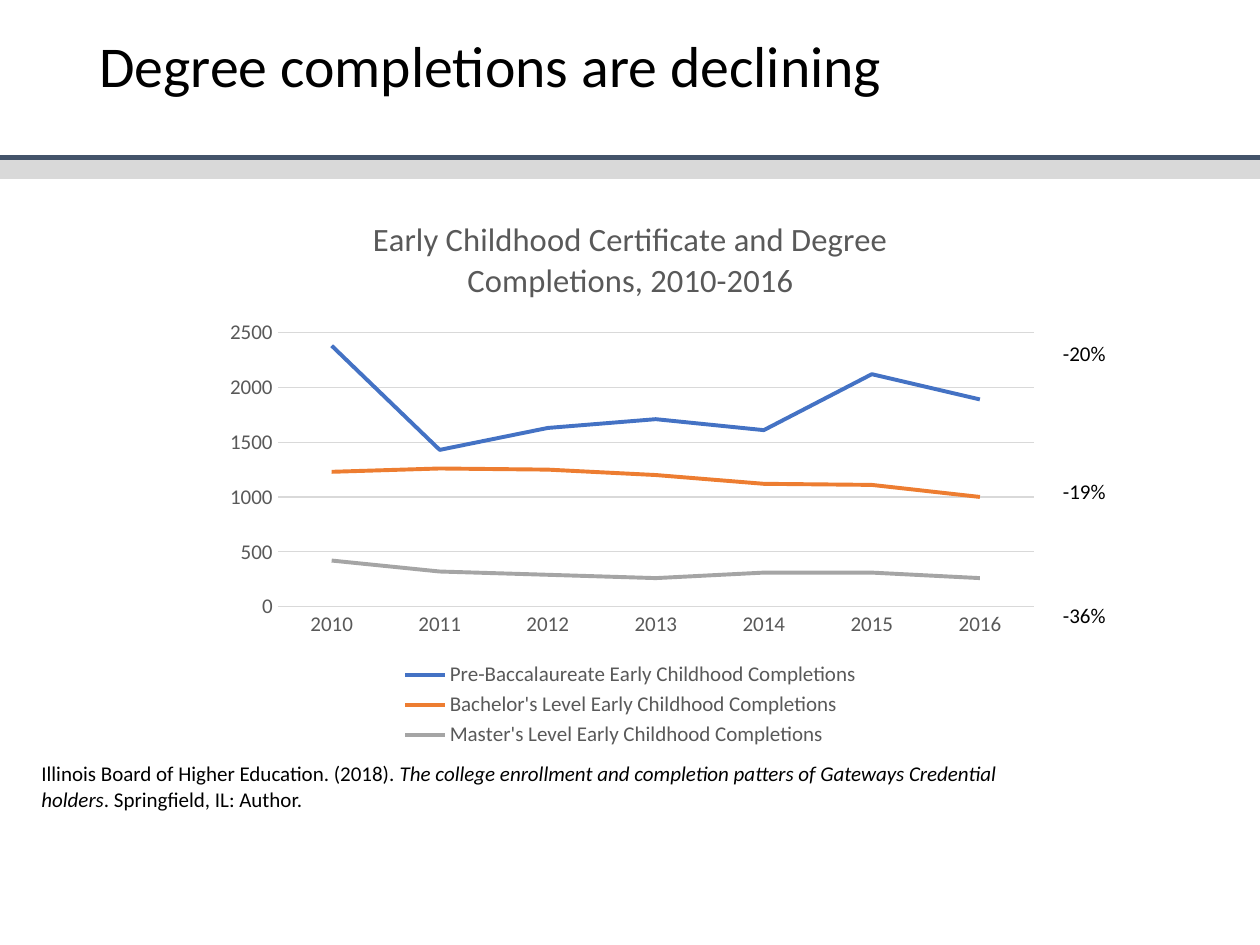
from dataclasses import dataclass

from lxml import etree
from pptx import Presentation
from pptx.chart.data import CategoryChartData
from pptx.dml.color import RGBColor
from pptx.enum.chart import XL_CHART_TYPE, XL_LEGEND_POSITION, XL_MARKER_STYLE, XL_TICK_MARK
from pptx.enum.shapes import MSO_CONNECTOR
from pptx.enum.text import MSO_ANCHOR, PP_ALIGN
from pptx.oxml import parse_xml
from pptx.oxml.ns import nsdecls, qn
from pptx.util import Inches, Pt


@dataclass(frozen=True)
class Theme:
    font: str = "Calibri"
    title_size: float = 33
    chart_title_size: float = 18.6
    body_size: float = 12
    black: RGBColor = RGBColor.from_string("000000")
    gray: RGBColor = RGBColor.from_string("595959")
    light: RGBColor = RGBColor.from_string("D9D9D9")
    navy: RGBColor = RGBColor.from_string("44546A")
    blue: RGBColor = RGBColor.from_string("4472C4")
    orange: RGBColor = RGBColor.from_string("ED7D31")
    silver: RGBColor = RGBColor.from_string("A5A5A5")


theme = Theme()


def style_font(font, size, color):
    font.name = theme.font
    font.size = Pt(size)
    font.color.rgb = color
    font.bold = False


def add_text(slide, bounds, runs, size, align=PP_ALIGN.LEFT):
    """Add a one-paragraph box; runs are (text, italic) pairs."""
    box = slide.shapes.add_textbox(*map(Inches, bounds))
    box.text_frame.word_wrap = True
    para = box.text_frame.paragraphs[0]
    para.alignment = align
    for text, italic in runs:
        span = para.add_run()
        span.text = text
        style_font(span.font, size, theme.black)
        span.font.italic = italic
    return box


deck = Presentation()
deck.slide_width, deck.slide_height = Inches(10), Inches(7.5)
slide = deck.slides.add_slide(deck.slide_layouts[6])

# Header rules
for y, color, width in ((1.33, theme.light, 12.5), (1.25, theme.navy, 3)):
    rule = slide.shapes.add_connector(
        MSO_CONNECTOR.STRAIGHT, Inches(0), Inches(y), Inches(10), Inches(y))
    rule.line.color.rgb = color
    rule.line.width = Pt(width)
    etree.SubElement(rule._element.spPr, qn("a:effectLst"))

# Completions chart
data = CategoryChartData()
data.categories = [str(year) for year in range(2010, 2017)]
completions = (
    ("Pre-Baccalaureate", (2380, 1430, 1630, 1710, 1610, 2120, 1890), theme.blue),
    ("Bachelor's Level", (1230, 1260, 1250, 1200, 1120, 1110, 1000), theme.orange),
    ("Master's Level", (420, 320, 290, 260, 310, 310, 260), theme.silver),
)
for level, values, _ in completions:
    data.add_series(f"{level} Early Childhood Completions", values)
chart = slide.shapes.add_chart(
    XL_CHART_TYPE.LINE, Inches(1.67), Inches(1.53), Inches(6.67), Inches(4.44), data).chart
style_font(chart.font, theme.body_size, theme.gray)

chart.has_title = True
title_para = chart.chart_title.text_frame.paragraphs[0]
title_span = title_para.add_run()
title_span.text = "Early Childhood Certificate and Degree Completions, 2010-2016"
style_font(title_span.font, theme.chart_title_size, theme.gray)
chart.chart_title.include_in_layout = False

chart.has_legend = True
chart.legend.position = XL_LEGEND_POSITION.BOTTOM
chart.legend.include_in_layout = False
style_font(chart.legend.font, theme.body_size, theme.gray)

for axis in (chart.category_axis, chart.value_axis):
    axis.major_tick_mark = axis.minor_tick_mark = XL_TICK_MARK.NONE
    style_font(axis.tick_labels.font, theme.body_size, theme.gray)
chart.category_axis.format.line.color.rgb = theme.light
chart.category_axis.format.line.width = Pt(0.75)
scale = chart.value_axis
scale.minimum_scale, scale.maximum_scale, scale.major_unit = 0, 2500, 500
scale.format.line.fill.background()
scale.has_major_gridlines = True
scale.major_gridlines.format.line.color.rgb = theme.light
scale.major_gridlines.format.line.width = Pt(0.75)

chart.plots[0].vary_by_categories = False
for series, (_, _, color) in zip(chart.plots[0].series, completions):
    series.smooth = False
    series.marker.style = XL_MARKER_STYLE.NONE
    series.format.line.color.rgb = color
    series.format.line.width = Pt(2.25)

# Fixed plot area, as fractions of the chart
plot_area = chart._chartSpace.chart.plotArea
for layout in plot_area.findall(qn("c:layout")):
    plot_area.remove(layout)
places = "".join(f'<c:{tag} val="{value}"/>' for tag, value in (
    ("layoutTarget", "inner"), ("xMode", "edge"), ("yMode", "edge"),
    ("x", 0.08), ("y", 0.25), ("w", 0.9), ("h", 0.49)))
plot_area.insert(0, parse_xml(
    f'<c:layout {nsdecls("c")}><c:manualLayout>{places}</c:manualLayout></c:layout>'))

# Source and change labels
add_text(slide, (0.23, 5.99, 8.11, 0.5), (
    ("Illinois Board of Higher Education. (2018). ", False),
    ("The college enrollment and completion patters of Gateways Credential holders", True),
    (". Springfield, IL: Author.", False),
), theme.body_size)
for y, change in ((2.65, "-20%"), (3.75, "-19%"), (4.73, "-36%")):
    add_text(slide, (8.27, y, 0.67, 0.3), ((change, False),), theme.body_size, PP_ALIGN.CENTER)

# Title, raised within its box by the bottom inset
title = add_text(slide, (0.69, 0.07, 8.62, 1.45),
                 (("Degree completions are declining", False),), theme.title_size)
title.text_frame.vertical_anchor = MSO_ANCHOR.MIDDLE
title.text_frame.margin_bottom = Inches(0.55)
title.text_frame.paragraphs[0].line_spacing = 0.9

deck.save("out.pptx")
